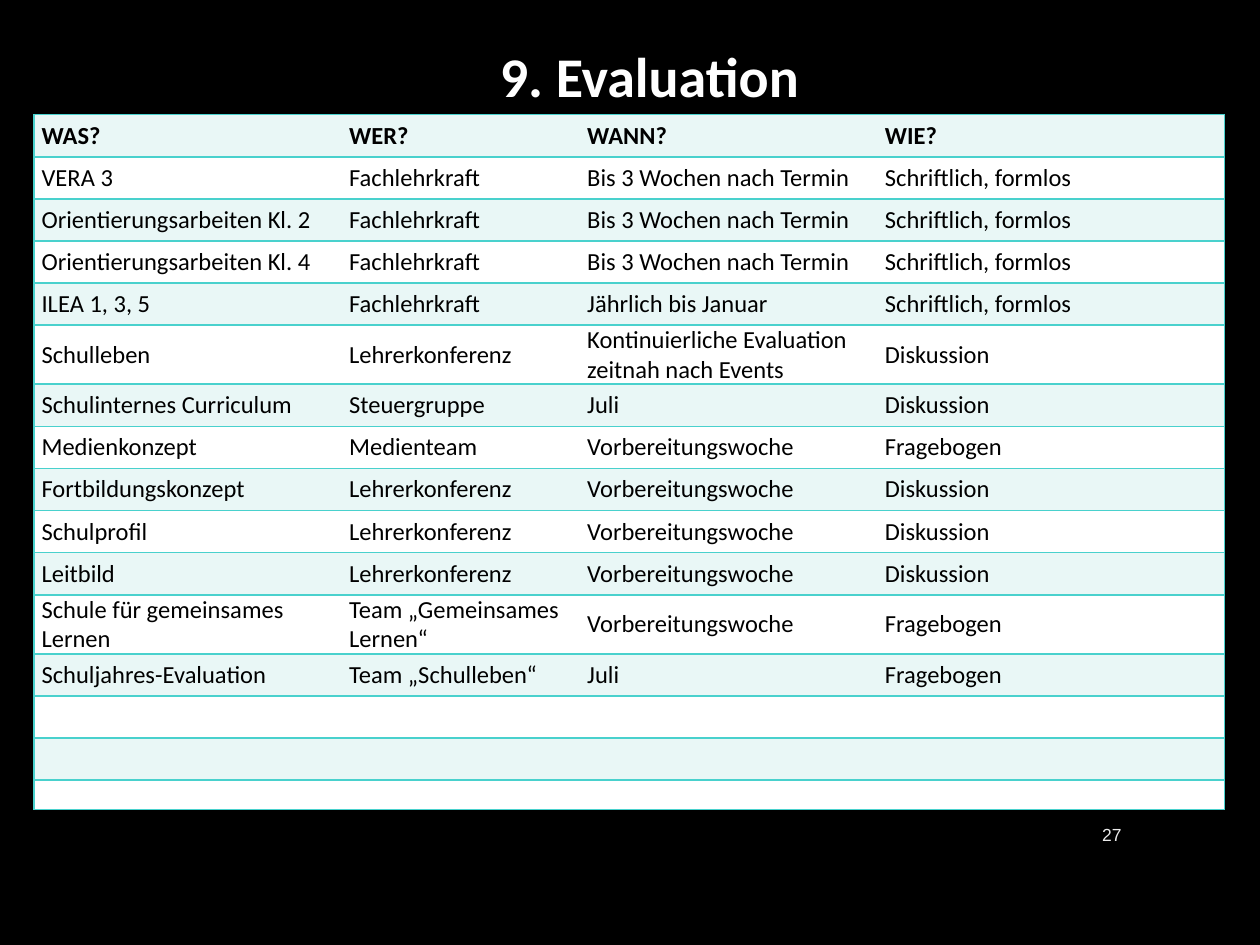
"""Builds the evaluation overview slide."""
from dataclasses import dataclass

from lxml import etree
from pptx import Presentation
from pptx.dml.color import RGBColor
from pptx.enum.text import MSO_ANCHOR, PP_ALIGN
from pptx.oxml.ns import qn
from pptx.util import Emu, Inches, Pt

LEFT, CENTER, RIGHT = PP_ALIGN.LEFT, PP_ALIGN.CENTER, PP_ALIGN.RIGHT
TOP, MIDDLE = MSO_ANCHOR.TOP, MSO_ANCHOR.MIDDLE


@dataclass(frozen=True)
class Theme:
    """Colours, fonts and type sizes of the slide."""
    background: str = "000000"
    light: str = "FFFFFF"
    dark: str = "000000"
    band: str = "E9F7F6"
    rule: str = "49D1CD"
    muted: str = "EBEBEB"
    font: str = "Calibri"
    number_font: str = "Arial"
    title_size: int = 32
    cell_size: int = 14
    empty_size: int = 12
    number_size: int = 10
    rule_width: int = 1


@dataclass(frozen=True)
class Area:
    """A rectangle in inches."""
    left: float
    top: float
    width: float
    height: float

    def lengths(self) -> list:
        """Return the four lengths in the order that shapes expect."""
        return [Inches(part) for part in (self.left, self.top, self.width, self.height)]


THEME = Theme()
TITLE_AREA = Area(2.4, 0.28, 5.51, 0.64)
NUMBER_AREA = Area(8.54, 6.42, 0.46, 0.41)
TABLE_AREA = Area(0.27, 0.91, 9.45, 5.52)
COLUMN_WEIGHTS = (31, 24, 30, 35)
SINGLE, DOUBLE, SLIM = 10, 14, 7
ROW_WEIGHTS = [SINGLE] * 5 + [DOUBLE] + [SINGLE] * 5 + [DOUBLE] + [SINGLE] * 3 + [SLIM]

TEACHER, STAFF = "Fachlehrkraft", "Lehrerkonferenz"
THREE_WEEKS, PREPARATION = "Bis 3 Wochen nach Termin", "Vorbereitungswoche"
WRITTEN, TALK, SURVEY = "Schriftlich, formlos", "Diskussion", "Fragebogen"
BLANK = ("", "", "", "")

ROWS = [
    ("WAS?", "WER?", "WANN?", "WIE?"),
    ("VERA 3", TEACHER, THREE_WEEKS, WRITTEN),
    ("Orientierungsarbeiten Kl. 2", TEACHER, THREE_WEEKS, WRITTEN),
    ("Orientierungsarbeiten Kl. 4", TEACHER, THREE_WEEKS, WRITTEN),
    ("ILEA 1, 3, 5", TEACHER, "Jährlich bis Januar", WRITTEN),
    ("Schulleben", STAFF, "Kontinuierliche Evaluation zeitnah nach Events", TALK),
    ("Schulinternes Curriculum", "Steuergruppe", "Juli", TALK),
    ("Medienkonzept", "Medienteam", PREPARATION, SURVEY),
    ("Fortbildungskonzept", STAFF, PREPARATION, TALK),
    ("Schulprofil", STAFF, PREPARATION, TALK),
    ("Leitbild", STAFF, PREPARATION, TALK),
    ("Schule für gemeinsames Lernen", "Team „Gemeinsames Lernen“", PREPARATION, SURVEY),
    ("Schuljahres-Evaluation", "Team „Schulleben“", "Juli", SURVEY),
    BLANK, BLANK, BLANK,
]


def write(frame, text: str, *, size: int, color: str, font: str = THEME.font,
          bold: bool = False, align=LEFT) -> None:
    """Put one formatted line of text in a text frame."""
    para = frame.paragraphs[0]
    para.alignment = align
    span = para.add_run()
    span.text = text
    span.font.name = font
    span.font.size = Pt(size)
    span.font.bold = bold
    span.font.color.rgb = RGBColor.from_string(color)


def add_text(page, area: Area, text: str, anchor, **style) -> None:
    """Add a wrapping text box."""
    frame = page.shapes.add_textbox(*area.lengths()).text_frame
    frame.word_wrap = True
    frame.vertical_anchor = anchor
    write(frame, text, **style)


def set_border(cell, side: str, visible: bool) -> None:
    """Draw or hide the border on one side of a cell."""
    properties = cell._tc.get_or_add_tcPr()
    line = etree.SubElement(properties, qn(f"a:ln{side}"), w=str(Pt(THEME.rule_width)))
    fill = etree.SubElement(line, qn("a:solidFill" if visible else "a:noFill"))
    if visible:
        etree.SubElement(fill, qn("a:srgbClr"), val=THEME.rule)


def fill_cell(cell, text: str, row: int, column: int) -> None:
    """Give a cell its borders, band colour and text."""
    visible = {"L": column == 0, "R": column == len(COLUMN_WEIGHTS) - 1, "T": True, "B": True}
    for side, shown in visible.items():
        set_border(cell, side, shown)
    cell.fill.solid()
    cell.fill.fore_color.rgb = RGBColor.from_string(THEME.light if row % 2 else THEME.band)
    cell.vertical_anchor = MIDDLE
    cell.margin_left = cell.margin_right = Inches(0.06)
    cell.margin_top = cell.margin_bottom = 0
    if text:
        write(cell.text_frame, text, size=THEME.cell_size, color=THEME.dark, bold=row == 0)
    else:
        etree.SubElement(cell.text_frame.paragraphs[0]._p, qn("a:endParaRPr"),
                         sz=str(THEME.empty_size * 100))


def share(total: float, weight: int, weights) -> Emu:
    """Return the part of a length that a weight stands for."""
    return Inches(total * weight / sum(weights))


def add_evaluation_table(page) -> None:
    """Add the banded evaluation table."""
    table = page.shapes.add_table(len(ROWS), len(COLUMN_WEIGHTS), *TABLE_AREA.lengths()).table
    for column, weight in zip(table.columns, COLUMN_WEIGHTS):
        column.width = share(TABLE_AREA.width, weight, COLUMN_WEIGHTS)
    for row, weight in zip(table.rows, ROW_WEIGHTS):
        row.height = share(TABLE_AREA.height, weight, ROW_WEIGHTS)
    for row, texts in enumerate(ROWS):
        for column, text in enumerate(texts):
            fill_cell(table.cell(row, column), text, row, column)


def main() -> None:
    """Build and save the deck."""
    deck = Presentation()
    deck.slide_width, deck.slide_height = Inches(10), Inches(7.5)
    page = deck.slides.add_slide(deck.slide_layouts[6])
    page.background.fill.solid()
    page.background.fill.fore_color.rgb = RGBColor.from_string(THEME.background)
    add_text(page, NUMBER_AREA, "27", MIDDLE, size=THEME.number_size, color=THEME.muted,
             font=THEME.number_font, align=RIGHT)
    add_text(page, TITLE_AREA, "9. Evaluation", TOP, size=THEME.title_size,
             color=THEME.light, bold=True, align=CENTER)
    add_evaluation_table(page)
    deck.save("out.pptx")


if __name__ == "__main__":
    main()
